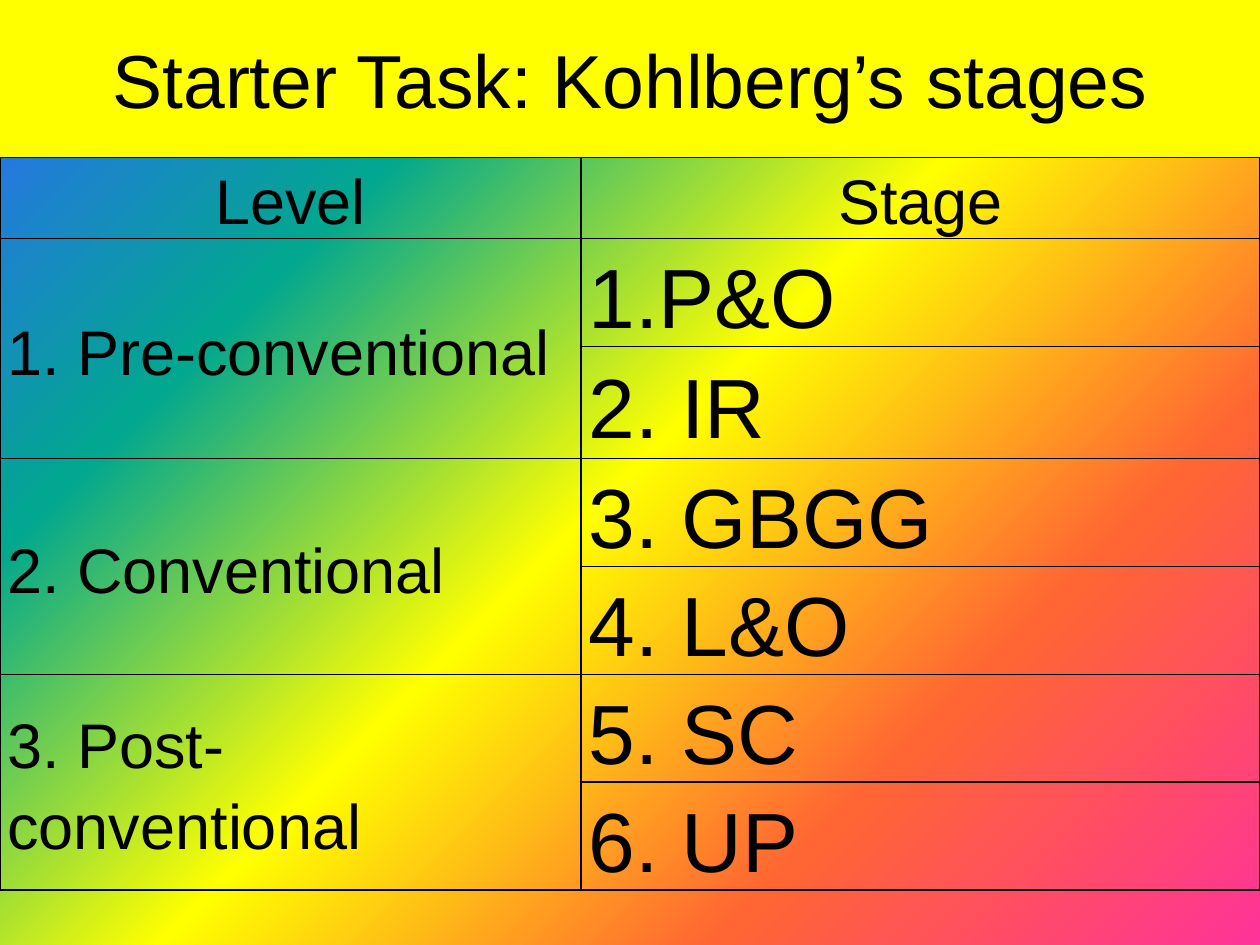
import pptx
import pptx.dml.color
import pptx.enum.text
import pptx.oxml
import pptx.oxml.ns
import pptx.util
from lxml import etree

Cm = pptx.util.Cm
Pt = pptx.util.Pt
qn = pptx.oxml.ns.qn
ALIGN = pptx.enum.text.PP_ALIGN
ANCHOR = pptx.enum.text.MSO_ANCHOR

COLORS = {
    "ink": "000000", "banner": "FFFF00",
    "pink": "FF3399", "orange": "FF6633", "yellow": "FFFF00",
    "teal": "01A78F", "blue": "3366FF",
}
RAINBOW = ["pink", "orange", "yellow", "teal", "blue"]
HEADINGS = ["Level", "Stage"]
LEVELS = ["1. Pre-conventional", "2. Conventional", "3. Post-conventional"]
STAGES = ["P&O", "2. IR", "3. GBGG", "4. L&O", "5. SC", "6. UP"]
COLUMN_WIDTHS = [11.71, 13.69]
ROW_HEIGHTS = [1.35, 2.11, 2.26, 1.55, 2.06, 1.4, 1.93]
CELL_FORMAT = {"margin_left": Cm(0.15), "margin_right": Cm(0.15),
               "margin_top": 0, "margin_bottom": 0}


def rgb(name):
    return pptx.dml.color.RGBColor.from_string(COLORS[name])


def apply_format(target, values):
    for name, value in values.items():
        setattr(target, name, value)


def style_font(font, size):
    apply_format(font, {"name": "Arial", "size": Pt(size), "bold": False})
    font.color.rgb = rgb("ink")


def paint_background(slide):
    fill = slide.background.fill
    fill.gradient()
    fill.gradient_angle = 135
    stops = next(slide.element.iter(qn("a:gsLst")))
    for stop in list(stops):
        stops.remove(stop)
    for index, name in enumerate(RAINBOW):
        stop = etree.SubElement(stops, qn("a:gs"), pos=str(index * 25000))
        etree.SubElement(stop, qn("a:srgbClr"), val=COLORS[name])


def add_banner(slide, left, top, width, height):
    banner = slide.shapes.title
    apply_format(banner, {"left": left, "top": top, "width": width, "height": height})
    banner.fill.solid()
    banner.fill.fore_color.rgb = rgb("banner")
    apply_format(banner.text_frame, {
        "text": "Starter Task: Kohlberg’s stages", "word_wrap": True,
        "auto_size": pptx.enum.text.MSO_AUTO_SIZE.NONE,
        "vertical_anchor": ANCHOR.MIDDLE})
    heading = banner.text_frame.paragraphs[0]
    heading.alignment = ALIGN.CENTER
    style_font(heading.runs[0].font, 42.9)


def outline_cell(cell):
    properties = cell._tc.get_or_add_tcPr()
    for index, side in enumerate(["lnL", "lnR", "lnT", "lnB"]):
        line = etree.Element(qn(f"a:{side}"), w=str(Pt(1)))
        solid = etree.SubElement(line, qn("a:solidFill"))
        etree.SubElement(solid, qn("a:srgbClr"), val=COLORS["ink"])
        properties.insert(index, line)


def write_cell(cell, words, size, align=ALIGN.LEFT, anchor=ANCHOR.MIDDLE):
    cell.text = words
    cell.vertical_anchor = anchor
    entry = cell.text_frame.paragraphs[0]
    apply_format(entry, {"alignment": align, "line_spacing": 1.15})
    style_font(entry.runs[0].font, size)


def number_cell(cell):
    properties = cell.text_frame.paragraphs[0]._p.get_or_add_pPr()
    properties.set("marL", str(Cm(0.97)))
    properties.set("indent", str(-Cm(0.97)))
    etree.SubElement(properties, qn("a:buFont"), typeface="+mj-lt")
    etree.SubElement(properties, qn("a:buAutoNum"), type="arabicPeriod")


def add_stages_table(slide, left, top, width, height):
    frame = slide.shapes.add_table(len(ROW_HEIGHTS), len(COLUMN_WIDTHS),
                                   left, top, width, height)
    stages = frame.table
    apply_format(stages, {"first_row": False, "horz_banding": False})
    for column, column_width in zip(stages.columns, COLUMN_WIDTHS):
        column.width = Cm(column_width)
    for row, row_height in zip(stages.rows, ROW_HEIGHTS):
        row.height = Cm(row_height)
    frame.height = height

    for cell in stages.iter_cells():
        apply_format(cell, CELL_FORMAT)
        cell.fill.background()
        outline_cell(cell)
    for column, heading in enumerate(HEADINGS):
        write_cell(stages.cell(0, column), heading, 36, ALIGN.CENTER, ANCHOR.TOP)
    for index, level in enumerate(LEVELS):
        first = 1 + 2 * index
        stages.cell(first, 0).merge(stages.cell(first + 1, 0))
        write_cell(stages.cell(first, 0), level, 36)
    for row, stage in enumerate(STAGES, 1):
        write_cell(stages.cell(row, 1), stage, 48)
    number_cell(stages.cell(1, 1))


def main():
    deck = pptx.Presentation()
    apply_format(deck, {"slide_width": Cm(25.4), "slide_height": Cm(19.05)})
    slide = deck.slides.add_slide(deck.slide_layouts[5])
    paint_background(slide)
    add_banner(slide, 0, 0, Cm(25.4), Cm(3.17))
    add_stages_table(slide, 0, Cm(3.17), Cm(25.4), Cm(15.77))
    deck.save("out.pptx")


if __name__ == "__main__":
    main()
